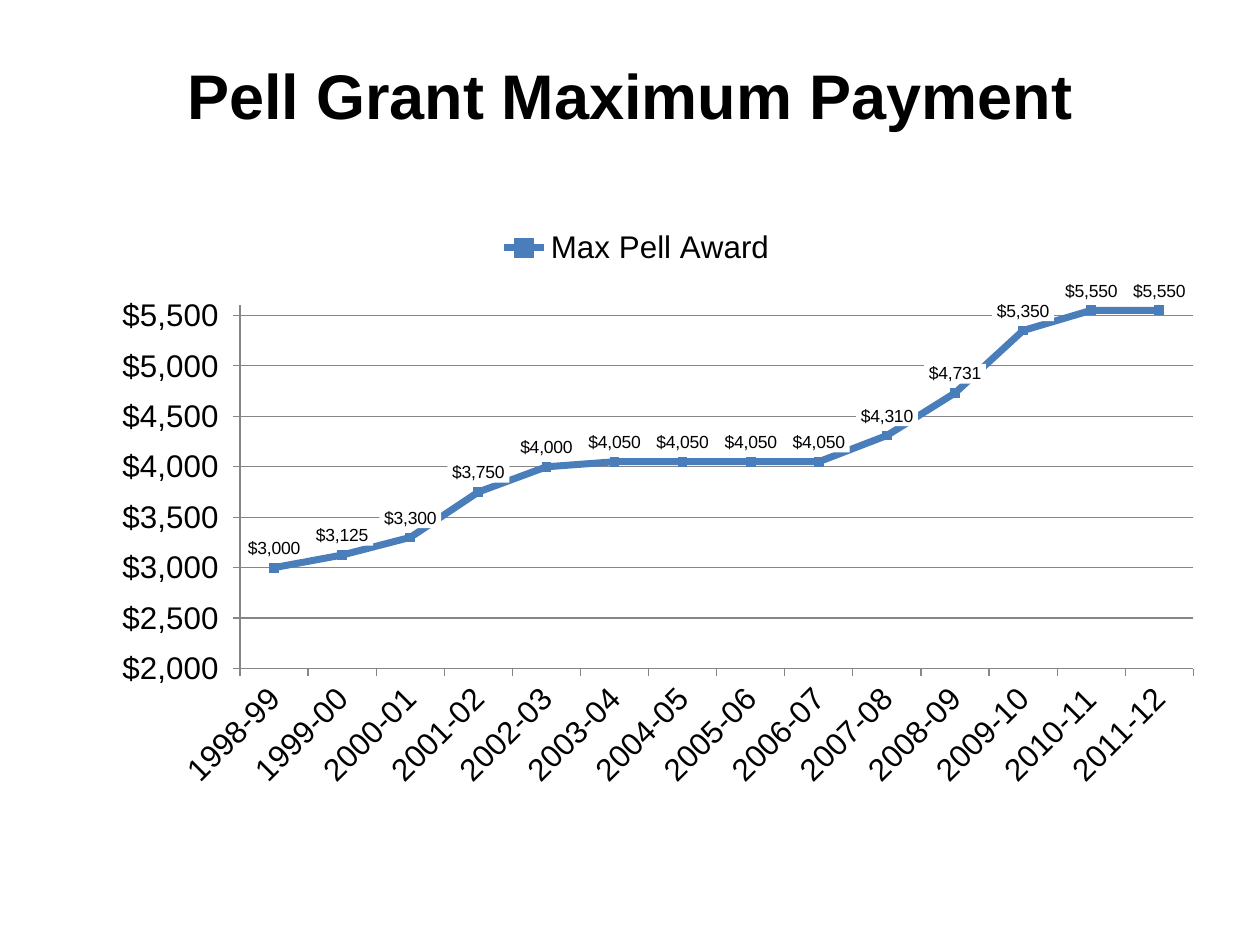
import pptx
import pptx.chart.data
import pptx.dml.color
import pptx.enum.chart
import pptx.enum.text
import pptx.oxml
import pptx.oxml.ns
import pptx.util
from pptx.util import Cm

FONT = "Arial"
AWARDS = [3000, 3125, 3300, 3750, 4000, 4050, 4050,
          4050, 4050, 4310, 4731, 5350, 5550, 5550]
YEARS = [f"{y}-{(y + 1) % 100:02d}" for y in range(1998, 1998 + len(AWARDS))]
MONEY = '_("$"* #,##0_);_("$"* \\(#,##0\\);_("$"* "-"_);_(@_)'


def color(hex_value):
    return pptx.dml.color.RGBColor.from_string(hex_value)


def set_font(font, size, bold=False, name=FONT):
    font.name = name
    font.size = pptx.util.Pt(size)
    font.bold = bold
    font.color.rgb = color("000000")


def set_line(line, hex_value, width):
    line.color.rgb = color(hex_value)
    line.width = pptx.util.Pt(width)


def add_title(s, text):
    sp = s.shapes.title
    sp.left, sp.top, sp.width, sp.height = Cm(0), Cm(0.64), Cm(25.4), Cm(2.54)
    tf = sp.text_frame
    tf.text = text
    tf.vertical_anchor = pptx.enum.text.MSO_ANCHOR.MIDDLE
    p = tf.paragraphs[0]
    p.alignment = pptx.enum.text.PP_ALIGN.CENTER
    set_font(p.runs[0].font, 36, True)


def format_axis(axis):
    axis.major_tick_mark = pptx.enum.chart.XL_TICK_MARK.OUTSIDE
    set_font(axis.tick_labels.font, 17.9)
    set_line(axis.format.line, "868686", 0.75)


def make_layout(percents, target=""):
    sizes = "".join(f'<c:{tag} val="{val / 100:.3f}"/>'
                    for tag, val in zip("xywh", percents))
    return pptx.oxml.parse_xml(
        f'<c:layout {pptx.oxml.ns.nsdecls("c")}><c:manualLayout>{target}'
        '<c:xMode val="edge"/><c:yMode val="edge"/>'
        f'{sizes}</c:manualLayout></c:layout>')


def remove_layout(element):
    for old in element.findall(pptx.oxml.ns.qn("c:layout")):
        element.remove(old)


def place_plot(chart, *percents):
    area = chart._chartSpace.chart.plotArea
    remove_layout(area)
    area.insert(0, make_layout(percents, '<c:layoutTarget val="inner"/>'))


def place_legend(legend, *percents):
    element = legend._element
    remove_layout(element)
    position = element.find(pptx.oxml.ns.qn("c:legendPos"))
    position.addnext(make_layout(percents))


def format_labels(labels):
    labels.show_value = True
    labels.number_format = MONEY
    labels.number_format_is_linked = False
    labels.position = pptx.enum.chart.XL_LABEL_POSITION.ABOVE
    set_font(labels.font, 10)
    fill = pptx.oxml.parse_xml(
        f'<c:spPr {pptx.oxml.ns.nsdecls("c", "a")}><a:solidFill>'
        '<a:srgbClr val="FFFFFF"/></a:solidFill></c:spPr>')
    labels._element.find(pptx.oxml.ns.qn("c:numFmt")).addnext(fill)


def format_series(series):
    series.smooth = False
    set_line(series.format.line, "4A7EBB", 4)
    marker = series.marker
    marker.style = pptx.enum.chart.XL_MARKER_STYLE.SQUARE
    marker.size = 5
    marker.format.fill.solid()
    marker.format.fill.fore_color.rgb = color("4F81BD")
    set_line(marker.format.line, "4A7EBB", 0.75)
    format_labels(series.data_labels)


def add_award_chart(s):
    data = pptx.chart.data.CategoryChartData(number_format=MONEY)
    data.categories = YEARS
    data.add_series("Max Pell Award", AWARDS)
    chart = s.shapes.add_chart(
        pptx.enum.chart.XL_CHART_TYPE.LINE_MARKERS,
        Cm(1.07), Cm(4.01), Cm(23.7), Cm(12.85), data).chart
    chart.has_title = False
    set_font(chart.font, 17.9, name="Calibri")
    chart.has_legend = True
    chart.legend.position = pptx.enum.chart.XL_LEGEND_POSITION.TOP
    chart.legend.include_in_layout = False
    set_font(chart.legend.font, 17.9)
    place_legend(chart.legend, 37.5, 3.9)
    place_plot(chart, 15.9, 16.7, 81.1, 57)

    years, dollars = chart.category_axis, chart.value_axis
    format_axis(years)
    years._element.txPr.bodyPr.set("rot", "-2700000")
    format_axis(dollars)
    dollars.minimum_scale, dollars.maximum_scale = 2000, 5600
    dollars.major_unit = 500
    dollars.tick_labels.number_format = MONEY
    dollars.tick_labels.number_format_is_linked = False
    dollars.has_major_gridlines = True
    set_line(dollars.major_gridlines.format.line, "868686", 0.75)

    plot = chart.plots[0]
    plot.vary_by_categories = False
    format_series(plot.series[0])


def main():
    prs = pptx.Presentation()
    prs.slide_width, prs.slide_height = Cm(25.4), Cm(19.05)
    s = prs.slides.add_slide(prs.slide_layouts[0])
    subtitle = s.placeholders[1].element
    subtitle.getparent().remove(subtitle)
    add_title(s, "Pell Grant Maximum Payment")
    add_award_chart(s)
    prs.save("out.pptx")


if __name__ == "__main__":
    main()
